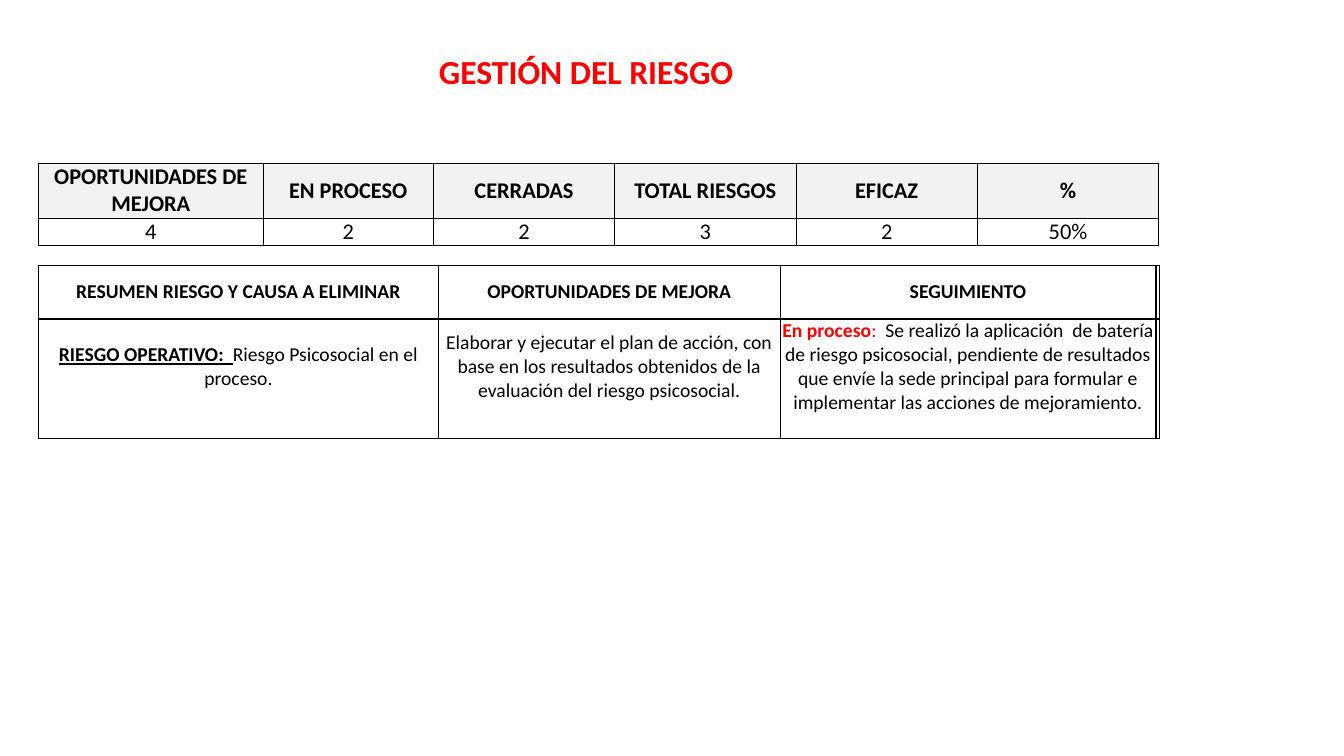
from lxml import etree
from pptx import Presentation
from pptx.dml.color import RGBColor
from pptx.enum.text import MSO_ANCHOR, MSO_AUTO_SIZE, PP_ALIGN
from pptx.oxml.ns import qn
from pptx.util import Cm, Pt

COLORS = {"black": "000000", "red": "FF0000", "white": "FFFFFF", "gray": "F2F2F2"}
FONT = "Calibri"


def style_run(span, size, bold=False, underline=False, color="black"):
    span.font.name = FONT
    span.font.size = Pt(size)
    span.font.bold = bold
    span.font.underline = underline
    span.font.color.rgb = RGBColor.from_string(COLORS[color])


def add_grid(page, top, widths, heights, rows, size, header_fill, border, body_bottom):
    """Add a bordered table; a cell is a list of (text, format) runs."""
    frame = page.shapes.add_table(len(rows), len(widths), Cm(0.97), Cm(top),
                                  Cm(sum(widths)), Cm(sum(heights)))
    table = frame.table
    table.horz_banding = False
    for column, width in zip(table.columns, widths):
        column.width = Cm(width)
    for r, (row, height) in enumerate(zip(rows, heights)):
        table.rows[r].height = Cm(height)
        for c, runs in enumerate(row):
            cell = table.cell(r, c)
            cell.margin_left = cell.margin_right = cell.margin_top = 0
            cell.margin_bottom = Cm(body_bottom if r else 0)
            cell.vertical_anchor = MSO_ANCHOR.MIDDLE
            properties = cell._tc.get_or_add_tcPr()
            for side in ("lnL", "lnR", "lnT", "lnB"):
                line = etree.SubElement(properties, qn(f"a:{side}"), w=str(Pt(border)))
                solid = etree.SubElement(line, qn("a:solidFill"))
                etree.SubElement(solid, qn("a:srgbClr"), val=COLORS["black"])
            cell.fill.solid()
            cell.fill.fore_color.rgb = RGBColor.from_string(
                COLORS["white" if r else header_fill])
            para = cell.text_frame.paragraphs[0]
            para.alignment = PP_ALIGN.CENTER
            for text, style in runs:
                span = para.add_run()
                span.text = text
                style_run(span, size, **style)


deck = Presentation()
deck.slide_width, deck.slide_height = Cm(33.87), Cm(19.05)
page = deck.slides.add_slide(deck.slide_layouts[5])

title = page.shapes.title
title.left, title.top, title.width, title.height = Cm(1.09), Cm(0.66), Cm(27.36), Cm(1.78)
title.text_frame.text = "GESTIÓN DEL RIESGO"
title.text_frame.auto_size = MSO_AUTO_SIZE.NONE
title.text_frame.vertical_anchor = MSO_ANCHOR.BOTTOM
heading = title.text_frame.paragraphs[0]
heading.alignment = PP_ALIGN.CENTER
heading.line_spacing = 0.9
style_run(heading.runs[0], 24, bold=True, color="red")

BOLD = {"bold": True}

follow_up_headers = ["RESUMEN RIESGO Y CAUSA A ELIMINAR", "OPORTUNIDADES DE MEJORA",
                     "SEGUIMIENTO"]
follow_up = [
    [[(text, BOLD)] for text in follow_up_headers] + [[]],
    [
        [("RIESGO OPERATIVO:  ", {"bold": True, "underline": True}),
         ("Riesgo Psicosocial en el proceso.", {})],
        [("Elaborar y ejecutar el plan de acción, con base en los resultados "
          "obtenidos de la evaluación del riesgo psicosocial.", {})],
        [("En proceso", {"bold": True, "color": "red"}),
         (":  ", {"color": "red"}),
         ("Se realizó la aplicación  de batería de riesgo psicosocial, pendiente de "
          "resultados que envíe la sede principal para formular e implementar las "
          "acciones de mejoramiento.", {})],
        [],
    ],
]
add_grid(page, 6.68, [10.08, 8.61, 9.47, 0.08], [1.36, 3], follow_up,
         size=14, header_fill="white", border=1, body_bottom=0.6)

totals = {"OPORTUNIDADES DE MEJORA": "4", "EN PROCESO": "2", "CERRADAS": "2",
          "TOTAL RIESGOS": "3", "EFICAZ": "2", "%": "50%"}
summary = [[[(text, BOLD)] for text in totals],
           [[(text, {})] for text in totals.values()]]
add_grid(page, 4.11, [5.66, 4.29] + [4.57] * 4, [1.38, 0.68], summary,
         size=16, header_fill="gray", border=0.5, body_bottom=0)

deck.save("out.pptx")
